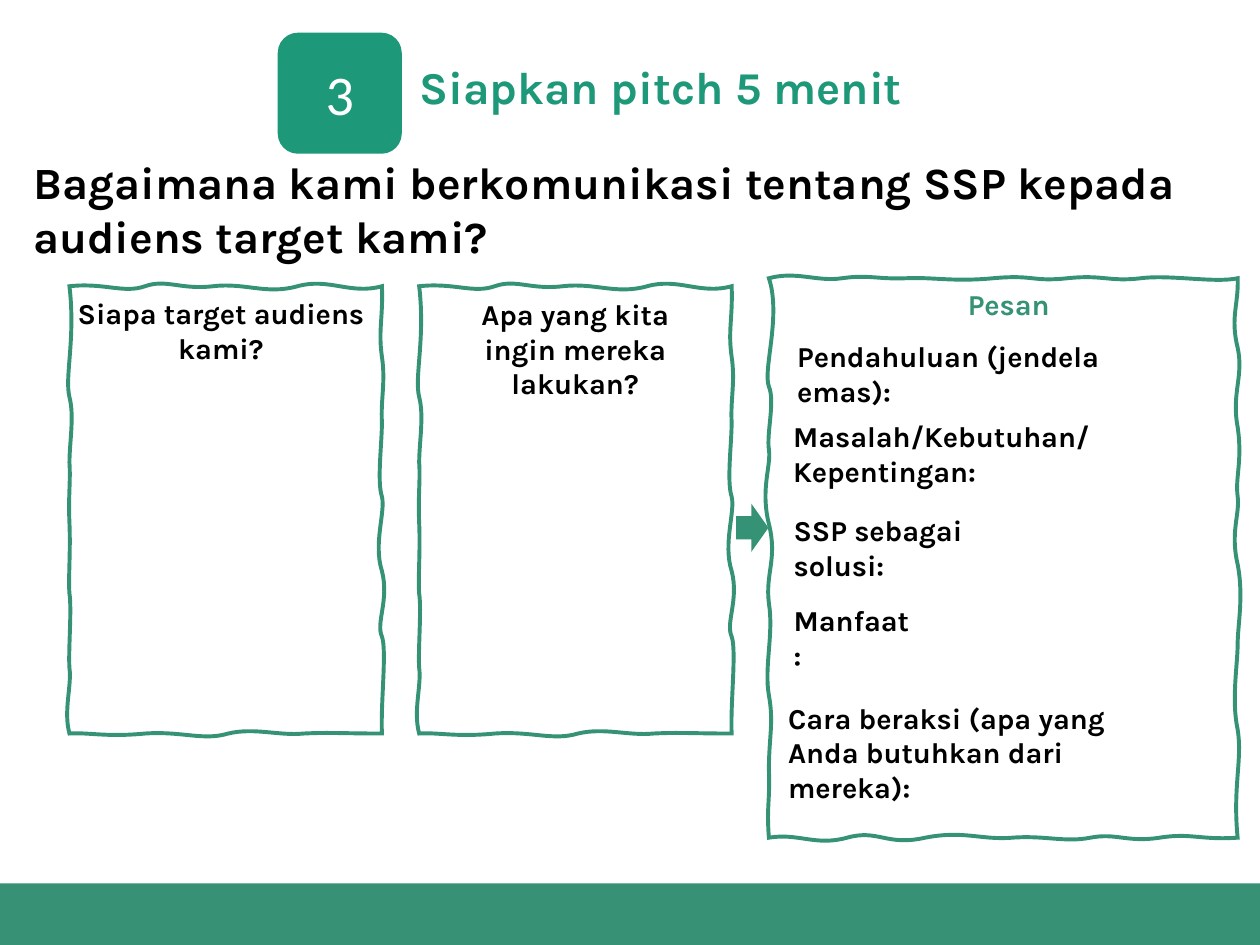
"""Build the slide that plans a five-minute pitch for the target audience."""
from lxml.etree import SubElement
from pptx import Presentation
from pptx.dml.color import RGBColor
from pptx.enum.shapes import MSO_SHAPE
from pptx.enum.text import MSO_ANCHOR, MSO_AUTO_SIZE, PP_ALIGN
from pptx.oxml.ns import qn
from pptx.util import Cm, Pt

COLORS = {
    "footer": "379175",
    "outline": "359275",
    "accent": "1D9879",
    "text": "000000",
    "white": "FFFFFF",
}
FONT = "Karla"
LABEL_SIZE = 16.5
OUTLINE_UNIT = Cm(0.0254)

QUESTION_OUTLINE = [
    (28, -3, 43, 6, 60, 0), (77, -6, 88, 3, 114, 0),
    (140, -3, 156, 7, 181, 0), (206, -7, 223, 7, 248, 0),
    (249, 25, 245, 35, 248, 56), (251, 76, 247, 90, 248, 108),
    (248, 125, 244, 155, 248, 167), (251, 179, 241, 204, 248, 226),
    (254, 249, 243, 267, 248, 278), (252, 289, 247, 330, 248, 355),
    (218, 355, 206, 354, 186, 355), (166, 357, 147, 350, 126, 355),
    (106, 361, 90, 353, 60, 355), (29, 358, 16, 354, 0, 355),
    (-5, 337, 2, 317, 0, 303), (-1, 290, 2, 256, 0, 244),
    (-1, 232, 1, 211, 0, 188), (-1, 166, 1, 155, 0, 140),
    (0, 124, 4, 103, 0, 88), (-4, 72, 5, 42, 0, 0),
]
MESSAGE_OUTLINE = [
    (22, -6, 38, 3, 58, 0), (79, -3, 87, 1, 109, 0),
    (131, -1, 146, 3, 178, 0), (211, -3, 208, 3, 237, 0),
    (265, -3, 270, 3, 295, 0), (319, -3, 354, 4, 372, 0),
    (373, 20, 366, 31, 372, 55), (377, 78, 367, 91, 372, 118),
    (376, 145, 370, 158, 372, 173), (374, 187, 366, 201, 372, 227),
    (377, 253, 372, 275, 372, 291), (372, 306, 367, 335, 372, 358),
    (376, 382, 368, 403, 372, 444),
    (342, 446, 335, 440, 310, 444), (284, 448, 276, 440, 255, 444),
    (235, 448, 219, 442, 193, 444), (168, 446, 155, 438, 124, 444),
    (93, 451, 87, 437, 62, 444), (37, 451, 23, 440, 0, 444),
    (-2, 419, 1, 415, 0, 390), (0, 364, 4, 353, 0, 331),
    (-4, 309, 4, 282, 0, 258), (-3, 234, 7, 223, 0, 195),
    (-7, 167, 2, 149, 0, 136), (-2, 123, 5, 98, 0, 86),
    (-5, 73, 10, 30, 0, 0),
]
LABELS = [
    ("Siapa target audiens kami?", (1.09, 5.84, 6.73, 1.68), "text", PP_ALIGN.CENTER),
    ("Apa yang kita ingin mereka lakukan?", (8.75, 5.86, 5.69, 1.68), "text", PP_ALIGN.CENTER),
    ("Pesan", (16.97, 5.66, 6.73, 0.97), "outline", PP_ALIGN.CENTER),
    ("Pendahuluan (jendela emas):", (15.82, 6.7, 8.1, 0.97), "text", PP_ALIGN.LEFT),
    ("Masalah/Kebutuhan/Kepentingan:", (15.74, 8.32, 9.45, 0.97), "text", PP_ALIGN.LEFT),
    ("SSP sebagai solusi:", (15.75, 10.21, 5.44, 0.97), "text", PP_ALIGN.LEFT),
    ("Manfaat:", (15.75, 12.03, 2.84, 0.97), "text", PP_ALIGN.LEFT),
    ("Cara beraksi (apa yang Anda butuhkan dari mereka):", (15.64, 13.99, 6.91, 2.36),
     "text", PP_ALIGN.LEFT),
]


def color(key):
    """Return the named colour."""
    return RGBColor.from_string(COLORS[key])


def style_paragraph(paragraph, size, color_key, font=FONT, bold=True):
    """Set the font of a whole paragraph."""
    paragraph.font.name = font
    paragraph.font.size = Pt(size)
    paragraph.font.bold = bold
    paragraph.font.color.rgb = color(color_key)


def add_text(slide, text, box, size, color_key="text", align=PP_ALIGN.LEFT,
             anchor=MSO_ANCHOR.TOP, fit=MSO_AUTO_SIZE.SHAPE_TO_FIT_TEXT):
    """Add a wrapped text box and return its frame."""
    frame = slide.shapes.add_textbox(*map(Cm, box)).text_frame
    frame.word_wrap = True
    frame.auto_size = fit
    frame.vertical_anchor = anchor
    paragraph = frame.paragraphs[0]
    paragraph.text = text
    paragraph.alignment = align
    style_paragraph(paragraph, size, color_key)
    return frame


def add_block(slide, preset, box, color_key):
    """Add a plain filled shape without an outline."""
    block = slide.shapes.add_shape(preset, *map(Cm, box))
    block.shadow.inherit = False
    block.fill.solid()
    block.fill.fore_color.rgb = color(color_key)
    block.line.fill.background()
    return block


def draw_outline(shape, width):
    """Give a shape a green line with sharp corners."""
    shape.line.color.rgb = color("outline")
    shape.line.width = Pt(width)
    line = shape._element.spPr.find(qn("a:ln"))
    SubElement(line, qn("a:miter"), lim="800000")


def bend_segments(shape, curves):
    """Turn each straight segment of a freeform into its cubic curve."""
    segments = list(shape._element.iter(qn("a:lnTo")))
    for segment, curve in zip(segments, curves):
        outline = segment.getparent()
        bend = SubElement(outline, qn("a:cubicBezTo"))
        for x, y in zip(curve[::2], curve[1::2]):
            SubElement(bend, qn("a:pt"), x=str(x), y=str(y))
        outline.replace(segment, bend)


def add_wavy_panel(slide, left, top, curves):
    """Add an unfilled panel with a hand-drawn outline."""
    builder = slide.shapes.build_freeform(0, 0, scale=OUTLINE_UNIT)
    builder.add_line_segments([curve[4:] for curve in curves], close=True)
    panel = builder.convert_to_shape(Cm(left), Cm(top))
    bend_segments(panel, curves)
    panel.shadow.inherit = False
    panel.fill.background()
    draw_outline(panel, 2.25)


def add_step_number(slide, number):
    """Add the rounded badge with the step number."""
    badge = add_block(slide, MSO_SHAPE.ROUNDED_RECTANGLE, (5.6, 0.66, 2.5, 2.44), "accent")
    frame = badge.text_frame
    frame.vertical_anchor = MSO_ANCHOR.MIDDLE
    paragraph = frame.paragraphs[0]
    paragraph.text = number
    paragraph.alignment = PP_ALIGN.CENTER
    style_paragraph(paragraph, 32, "white", font="Calibri", bold=False)


def main():
    """Build and save the slide."""
    deck = Presentation()
    deck.slide_width, deck.slide_height = Cm(25.4), Cm(19.05)
    slide = deck.slides.add_slide(deck.slide_layouts[6])

    add_block(slide, MSO_SHAPE.RECTANGLE, (0, 17.81, 25.4, 1.24), "footer")
    question = add_text(
        slide, "Bagaimana kami berkomunikasi tentang SSP kepada audiens target kami?",
        (0.48, 3.03, 24.92, 2.36), 25.5, anchor=MSO_ANCHOR.MIDDLE)
    question.margin_left = question.margin_right = Cm(0.19)
    question.margin_top = question.margin_bottom = Cm(0.1)

    for left in (1.4, 8.45):
        add_wavy_panel(slide, left, 5.77, QUESTION_OUTLINE)
    add_wavy_panel(slide, 15.5, 5.61, MESSAGE_OUTLINE)
    for text, box, color_key, align in LABELS:
        add_text(slide, text, box, LABEL_SIZE, color_key, align)

    arrow = add_block(slide, MSO_SHAPE.RIGHT_ARROW, (14.86, 10.21, 0.61, 0.86), "outline")
    draw_outline(arrow, 1)

    add_step_number(slide, "3")
    title = add_text(slide, "Siapkan pitch 5 menit", (8.2, 0.53, 14.83, 2.57), 26, "accent",
                     anchor=MSO_ANCHOR.MIDDLE, fit=MSO_AUTO_SIZE.NONE)
    title.paragraphs[0].line_spacing = 0.9

    deck.save("out.pptx")


if __name__ == "__main__":
    main()
